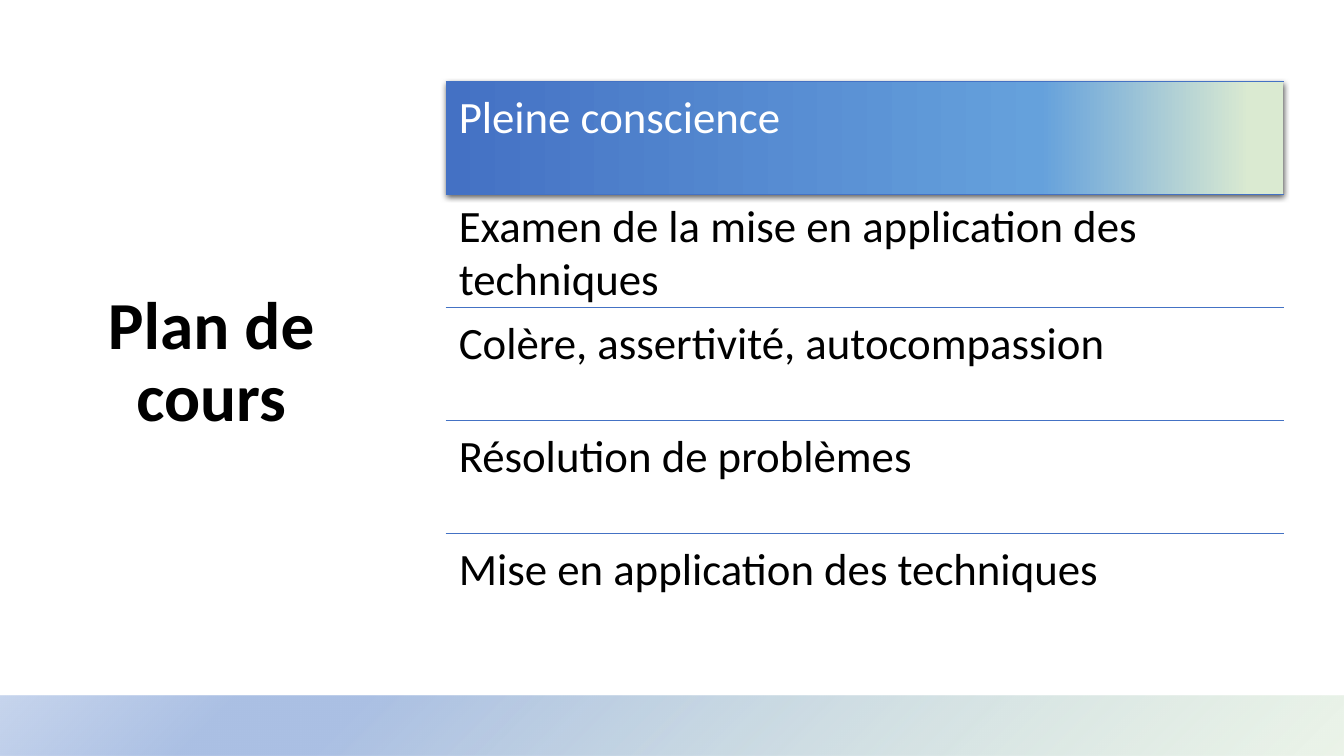
"""Build the course outline slide."""
from dataclasses import dataclass

from pptx import Presentation
from pptx.dml.color import RGBColor
from pptx.enum import shapes, text
from pptx.oxml import ns, parse_xml
from pptx.util import Inches, Pt


@dataclass(frozen=True)
class Theme:
    """Colours, type sizes and gradients of the slide."""
    font: str = "Calibri"
    title_size: int = 48
    item_size: int = 32
    ink: str = "000000"
    light: str = "FFFFFF"
    rule: str = "4472C4"
    band: tuple = ((0, "D6E8D1", 47), (74, "ABC0E4", 100),
                   (83, "ABC0E4", 100), (100, "C7D5ED", 100))
    highlight: tuple = ((0, "4471C4", 100), (71, "65A1DC", 100),
                        (96, "DAEAD1", 100))


THEME = Theme()
LEFT, TOP, WIDTH, ROW = 4.42, 0.81, 8.31, 1.12
ITEMS = (
    ("Pleine conscience",),
    ("Examen de la mise en application des", "techniques"),
    ("Colère, assertivité, autocompassion",),
    ("Résolution de problèmes",),
    ("Mise en application des techniques",),
)
LINEAR = '<a:lin ang="0" scaled="0"/>'
FROM_CORNER = '<a:path path="circle"><a:fillToRect l="100000" t="100000"/></a:path>'


def write(tf, lines, size, color=THEME.ink, bold=False, align=text.PP_ALIGN.LEFT,
          anchor=text.MSO_ANCHOR.TOP, spacing=0.9, after=0, inset=None):
    """Write one paragraph per line into a text frame."""
    tf.word_wrap = True
    tf.auto_size = text.MSO_AUTO_SIZE.NONE
    tf.vertical_anchor = anchor
    if inset is not None:
        tf.margin_left = tf.margin_right = Inches(inset)
        tf.margin_top = tf.margin_bottom = Inches(inset)
    for i, line in enumerate(lines):
        p = tf.add_paragraph() if i else tf.paragraphs[0]
        p.alignment, p.line_spacing = align, spacing
        p.space_before, p.space_after = Pt(0), Pt(after)
        r = p.add_run()
        r.text = line
        r.font.name, r.font.size, r.font.bold = THEME.font, Pt(size), bold
        r.font.color.rgb = RGBColor.from_string(color)


def add_gradient_rect(s, box, stops, direction):
    """Add a borderless rectangle with a gradient fill."""
    sp = s.shapes.add_shape(shapes.MSO_SHAPE.RECTANGLE, *map(Inches, box))
    sp.shadow.inherit = False
    sp.line.fill.background()
    sp.fill.gradient()
    spPr = sp._element.spPr
    stop_xml = "".join(
        f'<a:gs pos="{pos * 1000}"><a:srgbClr val="{color}">'
        f'<a:alpha val="{alpha * 1000}"/></a:srgbClr></a:gs>'
        for pos, color, alpha in stops)
    spPr.replace(spPr.find(ns.qn("a:gradFill")), parse_xml(
        f'<a:gradFill {ns.nsdecls("a")} rotWithShape="1">'
        f'<a:gsLst>{stop_xml}</a:gsLst>{direction}</a:gradFill>'))
    return sp


def add_shadow(sp):
    """Give a shape a soft shadow below it."""
    sp._element.spPr.find(ns.qn("a:effectLst")).append(parse_xml(
        f'<a:outerShdw {ns.nsdecls("a")} blurRad="{Pt(4.5)}" dist="{Pt(1.5)}" '
        'dir="5400000" algn="ctr" rotWithShape="0"><a:srgbClr val="000000">'
        '<a:alpha val="63000"/></a:srgbClr></a:outerShdw>'))


def add_rule(s, y):
    """Draw the horizontal rule above a row."""
    cx = s.shapes.add_connector(shapes.MSO_CONNECTOR.STRAIGHT, Inches(LEFT),
                                Inches(y), Inches(LEFT + WIDTH), Inches(y))
    cx.line.color.rgb = RGBColor.from_string(THEME.rule)
    cx.line.width = Pt(1)
    cx._element.spPr.append(parse_xml(f'<a:effectLst {ns.nsdecls("a")}/>'))


def add_item(s, row, lines):
    """Add one outline row with its rule and text."""
    y = TOP + row * ROW
    add_rule(s, y)
    tb = s.shapes.add_textbox(*map(Inches, (LEFT, y, WIDTH, ROW)))
    several = len(lines) > 1
    write(tb.text_frame, lines, THEME.item_size, inset=0.13,
          color=THEME.ink if row else THEME.light,
          spacing=1.0 if several else 0.9,
          anchor=text.MSO_ANCHOR.MIDDLE if several else text.MSO_ANCHOR.TOP)


def add_title(s):
    """Place and format the title."""
    sp = s.shapes.title
    sp.left, sp.top, sp.width, sp.height = map(Inches, (0.84, 1.78, 2.51, 3.66))
    write(sp.text_frame, ("Plan de cours",), THEME.title_size, bold=True, after=6,
          align=text.PP_ALIGN.CENTER, anchor=text.MSO_ANCHOR.MIDDLE)


def main():
    """Build and save the slide."""
    prs = Presentation()
    prs.slide_width, prs.slide_height = Inches(13.33), Inches(7.5)
    s = prs.slides.add_slide(prs.slide_layouts[5])
    add_gradient_rect(s, (0, 6.9, 13.33, 0.6), THEME.band, FROM_CORNER)
    add_shadow(add_gradient_rect(s, (LEFT, TOP, WIDTH, ROW), THEME.highlight, LINEAR))
    add_title(s)
    for row, lines in enumerate(ITEMS):
        add_item(s, row, lines)
    prs.save("out.pptx")


if __name__ == "__main__":
    main()
